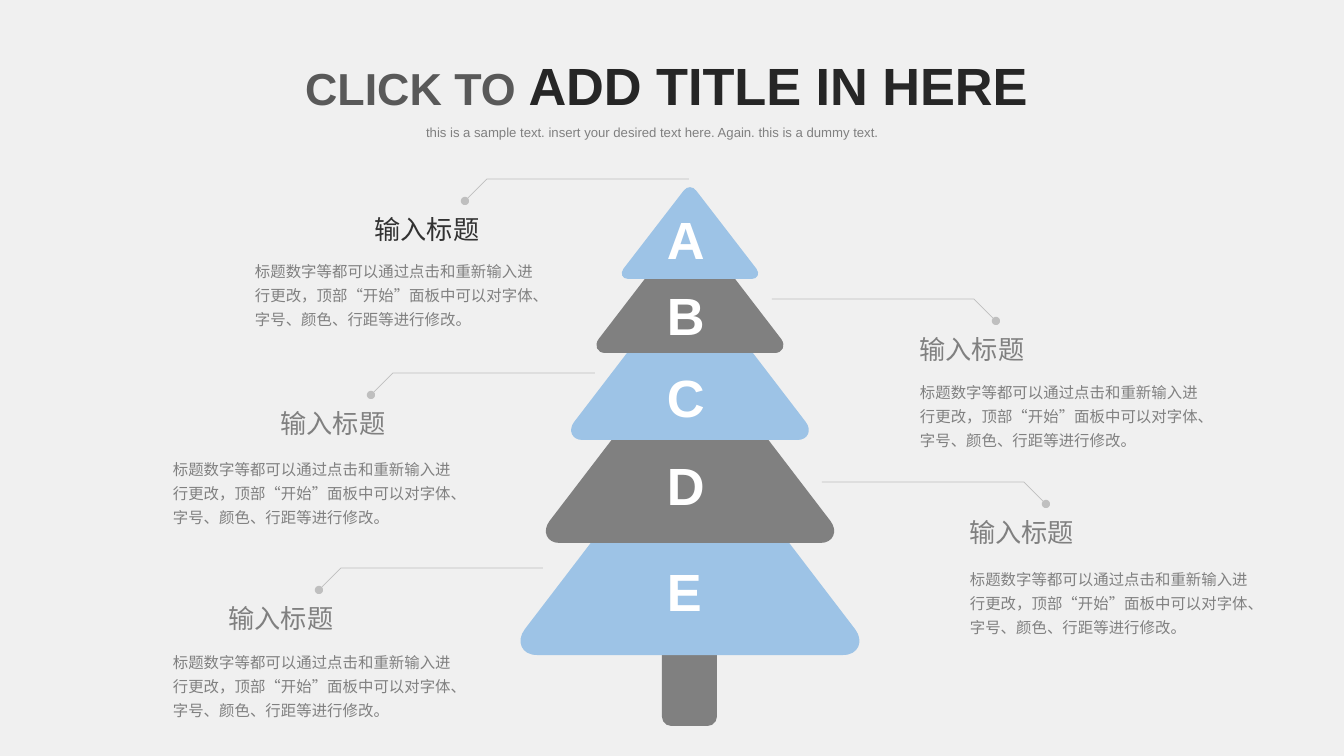
from dataclasses import dataclass
from lxml import etree
from pptx import Presentation
from pptx import util as u
from pptx.dml.color import RGBColor
from pptx.enum import shapes, text
from pptx.oxml.ns import qn

WIDE, HIGH = 1344, 756
SCALE = 12192000 / WIDE  # EMU in one px


@dataclass(frozen=True)
class Theme:
    back: str = "F0F0F0"
    blue: str = "9DC3E6"
    gray: str = "808080"
    line: str = "BFBFBF"
    white: str = "FFFFFF"
    dark: str = "262626"
    soft: str = "595959"
    ink: str = "323232"
    latin: str = "Arial"
    cjk: str = "Noto Sans CJK SC"
    big: float = 37.33
    mid: float = 32
    head: float = 18.67
    body: float = 11
    small: float = 9.33


T = Theme()
HEAD = "输入标题"
BODY = ("标题数字等都可以通过点击和重新输入进行更改，顶部“开始”面板中可以对字体、"
        "字号、颜色、行距等进行修改。")

# Letter, base of tier, top of letter box
TIERS = [("A", 279, 202), ("B", 353, 278), ("C", 440, 360),
         ("D", 543, 448), ("E", 655, 554)]
MID = 690  # axis of the tree

# Right half of a tier, as shares of its half width and height
CORNER = [(0.88, 1), (0.97, 1), (1, 0.94), (0.95, 0.89)]
TIP = [(0.09, 0.05), (0.04, 0), (-0.04, 0), (-0.09, 0.05)]

# Leader start, side (-1 left, 1 right), body corner, heading colour
NOTES = [((689, 179), -1, (245, 252), T.ink),
         ((595, 373), -1, (163, 450), T.gray),
         ((543, 568), -1, (163, 643), T.gray),
         ((772, 299), 1, (910, 373), T.gray),
         ((822, 482), 1, (960, 560), T.gray)]


def px(n):
    return u.Emu(round(n * SCALE))


def rgb(code):
    return RGBColor.from_string(code)


def put(item, vals):
    for key, val in vals.items():
        setattr(item, key, val)


def place(shape, x, y, w, h):
    put(shape, {"left": px(x), "top": px(y), "width": px(w), "height": px(h)})


def write(shape, runs, wrap=False, space=1.0):
    """Fill one paragraph with (words, size, colour, bold, font) runs."""
    frame = shape.text_frame
    put(frame, {"word_wrap": wrap, "auto_size": text.MSO_AUTO_SIZE.NONE,
                "vertical_anchor": text.MSO_ANCHOR.TOP})
    para = frame.paragraphs[0]
    put(para, {"alignment": text.PP_ALIGN.LEFT, "line_spacing": space,
               "space_before": u.Pt(0)})
    for words, size, color, bold, font in runs:
        run = para.add_run()
        run.text = words
        put(run.font, {"size": u.Pt(size), "bold": bold, "name": font})
        run.font.color.rgb = rgb(color)
        east = etree.Element(qn("a:ea"), typeface=T.cjk)
        run.font._element.find(qn("a:latin")).addnext(east)


def label(host, box, *run, **form):
    shape = host.add_textbox(*map(px, box))
    write(shape, [run], **form)


def paint(shape, color):
    shape.shadow.inherit = False
    shape.fill.solid()
    shape.fill.fore_color.rgb = rgb(color)
    shape.line.fill.background()


def outline(host, points, close):
    pts = [(px(x), px(y)) for x, y in points]
    pen = host.build_freeform(*pts[0])
    pen.add_line_segments(pts[1:], close=close)
    return pen.convert_to_shape()


def bend(shape, starts):
    """Turn the three lines from each start into one cubic curve."""
    lines = list(shape._element.iter(qn("a:lnTo")))
    for i in starts:
        first, *rest = lines[i:i + 3]
        first.tag = qn("a:cubicBezTo")
        for line in rest:
            first.append(line[0])
            line.getparent().remove(line)


def tier(host, step, base):
    half, tall = 70 + 26 * step, 93 + 35 * step
    left = [(-x, y) for x, y in reversed(CORNER)]
    pts = [(MID + x * half, base - tall + y * tall)
           for x, y in CORNER + TIP + left]
    shape = outline(host, pts, True)
    bend(shape, (0, 4, 8))
    paint(shape, T.gray if step % 2 else T.blue)


def trunk(host):
    kind = shapes.MSO_SHAPE.ROUNDED_RECTANGLE
    shape = host.add_shape(kind, *map(px, (662, 635, 55, 91)))
    shape.adjustments[0] = 0.17
    paint(shape, T.gray)


def leader(host, x, y, side):
    pts = [(x, y), (x + side * 202, y), (x + side * 224, y + 22)]
    shape = outline(host, pts, False)
    shape.shadow.inherit = False
    shape.fill.background()
    shape.line.color.rgb = rgb(T.line)
    shape.line.width = u.Pt(0.5)
    etree.SubElement(shape.line._get_or_add_ln(), qn("a:tailEnd"), type="oval")


def note(host, start, side, color):
    x, y = start
    left = x + (138 if side > 0 else -324)
    label(host, (left, y + 29, 126, 42), HEAD, T.head, color, False, T.latin)
    leader(host, x, y, side)


def main():
    deck = Presentation()
    put(deck, {"slide_width": px(WIDE), "slide_height": px(HIGH)})
    slide = deck.slides.add_slide(deck.slide_layouts[0])
    slide.background.fill.solid()
    slide.background.fill.fore_color.rgb = rgb(T.back)
    host = slide.shapes

    # Title and subtitle
    title, sub = slide.placeholders
    place(title, 295, 48, 750, 74)
    write(title, [("CLICK TO ", T.mid, T.soft, True, T.latin),
                  ("ADD TITLE IN HERE", T.big, T.dark, True, T.latin)])
    place(sub, 416, 119, 483, 26)
    write(sub, [("this is a sample text. insert your desired text here. "
                 "Again. this is a dummy text.",
                 T.small, T.gray, False, T.latin)])

    # Tree, from the trunk up
    trunk(host)
    for step, (_, base, _) in reversed(list(enumerate(TIERS))):
        tier(host, step, base)
    for letter, _, top in TIERS:
        label(host, (657, top, 58, 74), letter, T.big, T.white, True, T.latin)

    # Headings with leaders, grouped on the left, then the body text
    for start, side, _, color in NOTES:
        spot = host.add_group_shape().shapes if side < 0 else host
        note(spot, start, side, color)
    for _, _, corner, _ in NOTES:
        label(host, (*corner, 303, 83), BODY, T.body, T.gray, False, T.cjk,
              wrap=True, space=1.3)
    deck.save("out.pptx")


if __name__ == "__main__":
    main()
